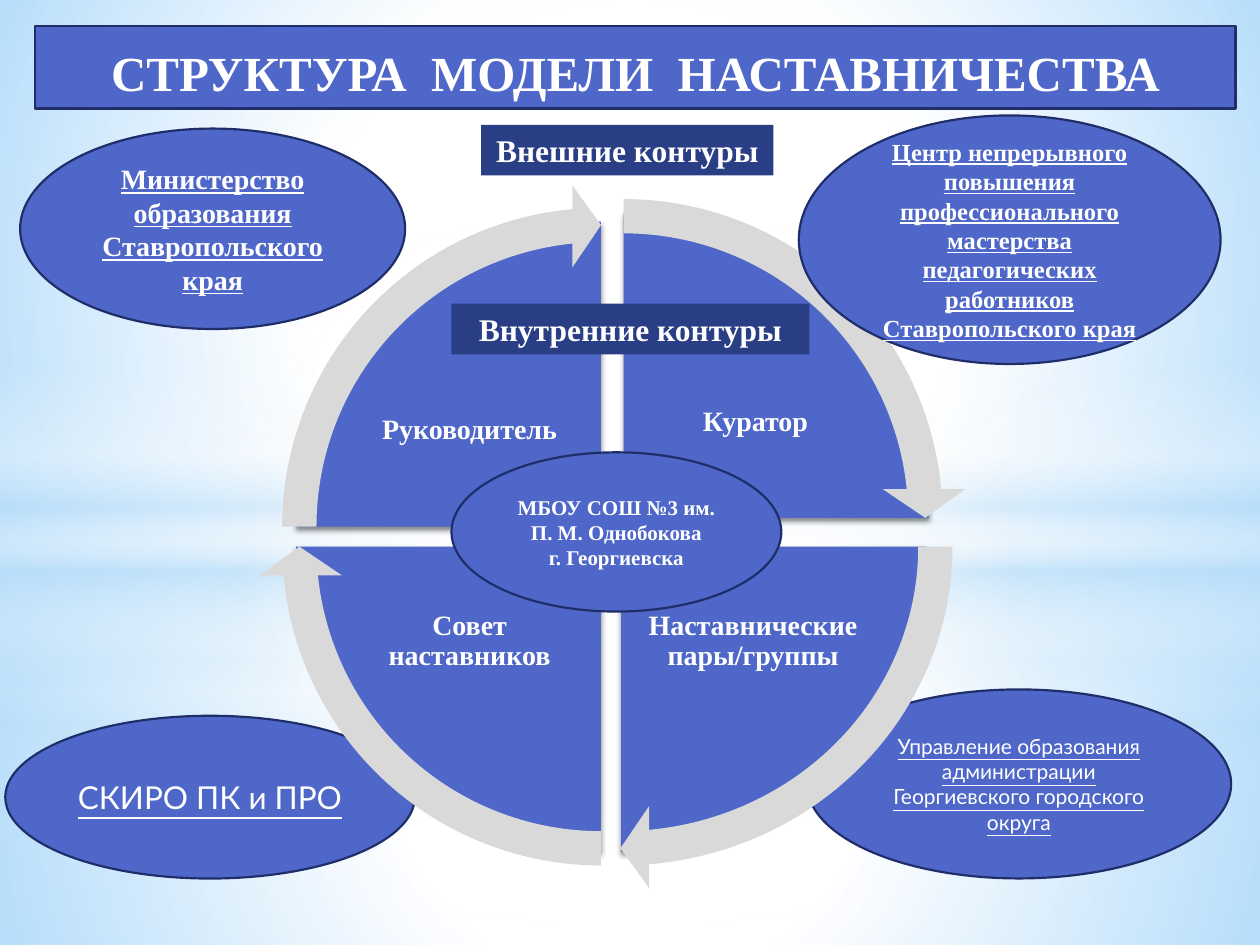
from lxml import etree
from pptx import Presentation
from pptx.dml.color import RGBColor
from pptx.enum.shapes import MSO_SHAPE
from pptx.enum.text import MSO_ANCHOR, MSO_AUTO_SIZE, PP_ALIGN
from pptx.oxml import parse_xml
from pptx.oxml.ns import nsdecls, qn
from pptx.util import Pt

RECT, OVAL = MSO_SHAPE.RECTANGLE, MSO_SHAPE.OVAL
PIE, ARROW = MSO_SHAPE.PIE, MSO_SHAPE.CIRCULAR_ARROW
MIDDLE, CENTER, NO_AUTOFIT = MSO_ANCHOR.MIDDLE, PP_ALIGN.CENTER, MSO_AUTO_SIZE.NONE
BLUE, NAVY, OUTLINE, GRAY = "4E67C8", "2A3E86", "1F2E69", "D9D9D9"
WHITE, SKY = "FFFFFF", "B4DCFA"
SERIF, SANS = "Times New Roman", "Lato"
QUARTER = 54  # 90 degrees in adjustment units
FULL_TURN = 4 * QUARTER

prs = Presentation()
prs.slide_width, prs.slide_height = Pt(720), Pt(540)
slide = prs.slides.add_slide(prs.slide_layouts[5])


def add_figure(kind, box, color, outlined=False):
    figure = slide.shapes.add_shape(kind, *map(Pt, box))
    figure.shadow.inherit = False
    figure.fill.solid()
    figure.fill.fore_color.rgb = RGBColor.from_string(color)
    if outlined:
        figure.line.color.rgb = RGBColor.from_string(OUTLINE)
        figure.line.width = Pt(1.25)
    else:
        figure.line.fill.background()
    return figure


def write(figure, text, size, name=SERIF, bold=True, underline=False, spacing=1.0):
    """Fill a shape with centred white text, one paragraph per line."""
    frame = figure.text_frame
    frame.word_wrap = True
    frame.auto_size = NO_AUTOFIT
    frame.vertical_anchor = MIDDLE
    frame.text = text
    font_format = {"size": Pt(size), "name": name, "bold": bold, "underline": underline}
    for paragraph in frame.paragraphs:
        paragraph.alignment = CENTER
        paragraph.line_spacing = spacing
        for run in paragraph.runs:
            for key, value in font_format.items():
                setattr(run.font, key, value)
            run.font.color.rgb = RGBColor.from_string(WHITE)


# Backdrop: soft light with a blue horizon; stops are position, colour, opacity
RADIAL = ('<a:path path="circle">'
          '<a:fillToRect l="50000" t="50000" r="50000" b="50000"/></a:path>')
LINEAR = '<a:lin ang="5400000" scaled="0"/>'
horizon = [(0, WHITE, 0), (29, WHITE, 30), (45, SKY, 40),
           (55, WHITE, 26), (65, SKY, 60), (100, WHITE, 0)]
backdrop = [
    (RECT, (0, 402, 720, 138), [(0, WHITE, 91), (37, WHITE, 76), (100, SKY, 79)], RADIAL),
    (RECT, (0, 0, 720, 402), [(0, WHITE, 89), (48, WHITE, 62), (100, SKY, 79)], RADIAL),
    (RECT, (0, 297, 720, 180), horizon, LINEAR),
    (OVAL, (0, 126, 720, 402), [(0, WHITE, 100), (56, WHITE, 0)], RADIAL),
    (RECT, (0, 304.5, 720, 235.5), [(0, WHITE, 92), (37, WHITE, 77), (100, SKY, 80)], RADIAL),
    (RECT, (0, 0, 720, 304.5), [(0, WHITE, 90), (48, WHITE, 63), (100, SKY, 80)], RADIAL),
    (RECT, (0, 209, 720, 180), horizon, LINEAR),
    (OVAL, (0, 126, 720, 402), [(0, WHITE, 100), (54, WHITE, 0)], RADIAL),
]
for kind, box, stops, direction in backdrop:
    light = add_figure(kind, box, WHITE)
    stop_xml = "".join(
        f'<a:gs pos="{position * 1000}"><a:srgbClr val="{color}">'
        f'<a:alpha val="{opacity * 1000}"/></a:srgbClr></a:gs>'
        for position, color, opacity in stops)
    gradient = parse_xml(f'<a:gradFill {nsdecls("a")} rotWithShape="1">'
                         f'<a:gsLst>{stop_xml}</a:gsLst>{direction}</a:gradFill>')
    properties = light.element.spPr
    properties.replace(properties.find(qn("a:solidFill")), gradient)

# Outer circle, part behind the wheel
write(add_figure(RECT, (275, 71.3, 167, 29), NAVY), "Внешние контуры", 18)
write(add_figure(OVAL, (3, 409, 234, 93), BLUE, True),
      "СКИРО ПК и ПРО", 18, SANS, bold=False, underline=True)
write(add_figure(OVAL, (461, 394, 242.5, 108), BLUE, True),
      "Управление образования администрации Георгиевского городского округа",
      12, SANS, bold=False, underline=True)

# Inner wheel, clockwise from the top right: role, sector corner, role corner
sectors = [
    ("Куратор", (182.2, 121.7), (367.2, 193.7)),
    ("Наставнические пары/группы", (180.7, 138.2), (365.8, 319)),
    ("Совет наставников", (169.2, 138.2), (203.8, 319)),
    ("Руководитель", (169.2, 126.7), (203.8, 198.7)),
]
for index, (role, sector_corner, role_corner) in enumerate(sectors):
    start = (3 + index) * QUARTER % FULL_TURN
    sector = add_figure(PIE, (*sector_corner, 348.5, 348.5), BLUE)
    sector.adjustments[0] = start
    sector.adjustments[1] = (start + QUARTER) % FULL_TURN
    effects = sector.element.spPr.find(qn("a:effectLst"))
    shadow = etree.SubElement(effects, qn("a:outerShdw"), blurRad=str(Pt(3.1)),
                              dist=str(Pt(1.8)), dir="5400000", rotWithShape="0")
    shade = etree.SubElement(shadow, qn("a:srgbClr"), val="000000")
    etree.SubElement(shade, qn("a:alpha"), val="45000")

    caption = slide.shapes.add_textbox(*map(Pt, (*role_corner, 129, 95)))
    write(caption, role, 16, spacing=0.9)
    for side in ("left", "top", "right", "bottom"):
        setattr(caption.text_frame, f"margin_{side}", Pt(1.4))

arrow_boxes = [(160.6, 100.1, 391.7, 391.7), (151.2, 116.6, 406.8, 391.7),
               (147.6, 116.6, 391.7, 391.7), (147.6, 105.1, 391.7, 391.7)]
for index, box in enumerate(arrow_boxes):
    start = (3 + index) * QUARTER % FULL_TURN
    arrow = add_figure(ARROW, box, GRAY)
    for position, value in enumerate((0.05, 3.28, start + 50.73, start, 0.06)):
        arrow.adjustments[position] = value

write(add_figure(OVAL, (258, 258.5, 188.5, 91), BLUE, True),
      "МБОУ СОШ №3 им. П. М. Однобокова\nг. Георгиевска", 12)

# Title bar, brought in front of the backdrop
title = slide.shapes.title
for side, value in zip(("left", "top", "width", "height"), (20, 15, 686, 47)):
    setattr(title, side, Pt(value))
title.fill.solid()
title.fill.fore_color.rgb = RGBColor.from_string(BLUE)
title.line.color.rgb = RGBColor.from_string(OUTLINE)
title.line.width = Pt(1.25)
write(title, "СТРУКТУРА  МОДЕЛИ  НАСТАВНИЧЕСТВА", 28, spacing=1.15)
slide.shapes.element.append(title.element)

# Outer circle, part in front of the wheel
write(add_figure(OVAL, (11.5, 73.5, 220, 114.5), BLUE, True),
      "Министерство образования Ставропольского края", 16, underline=True)
write(add_figure(OVAL, (456.5, 66, 241, 142), BLUE, True),
      "Центр непрерывного повышения профессионального мастерства "
      "педагогических работников Ставропольского края", 14, underline=True)
write(add_figure(RECT, (258, 173.5, 204.5, 29), NAVY), "Внутренние контуры", 18)

prs.save("out.pptx")
